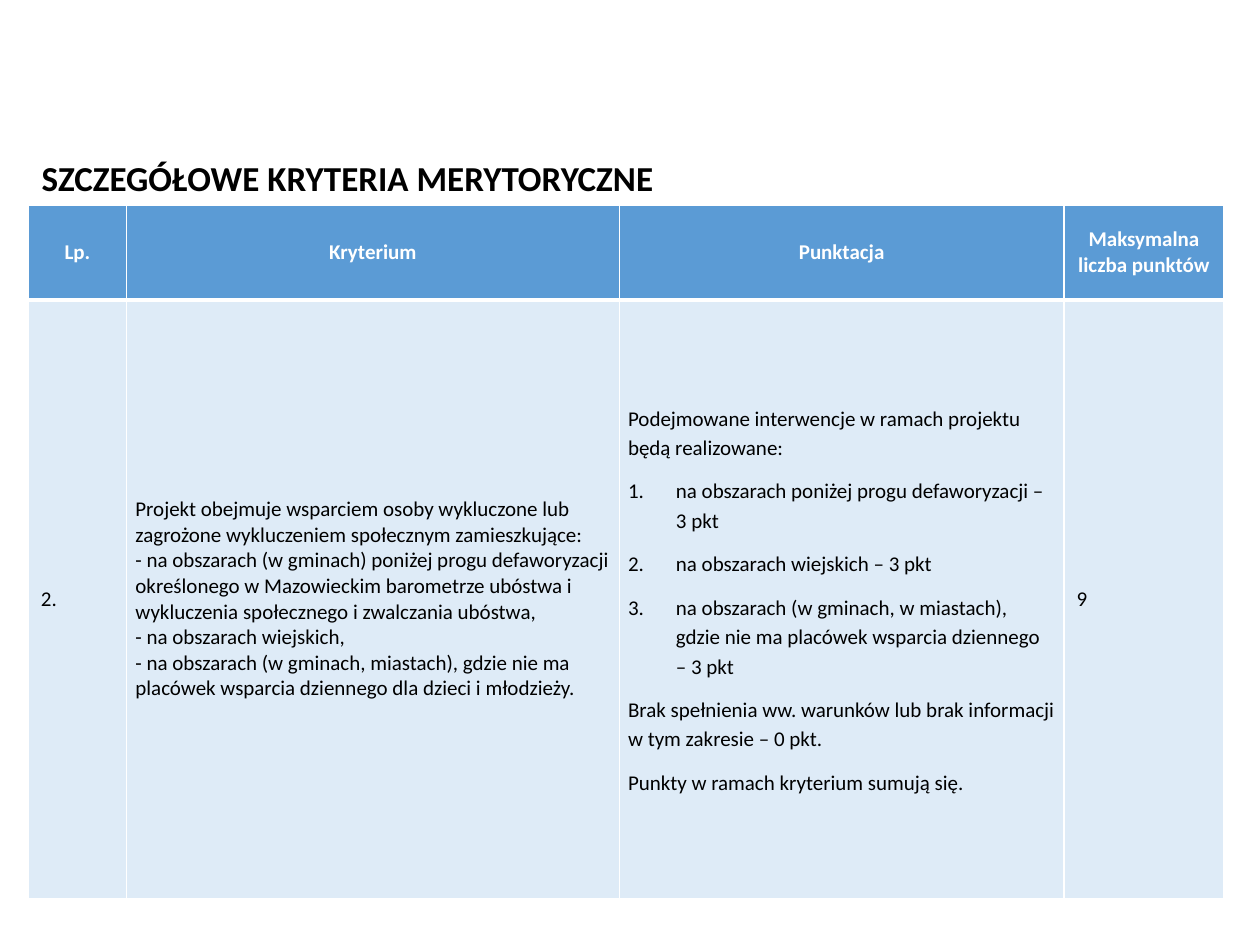
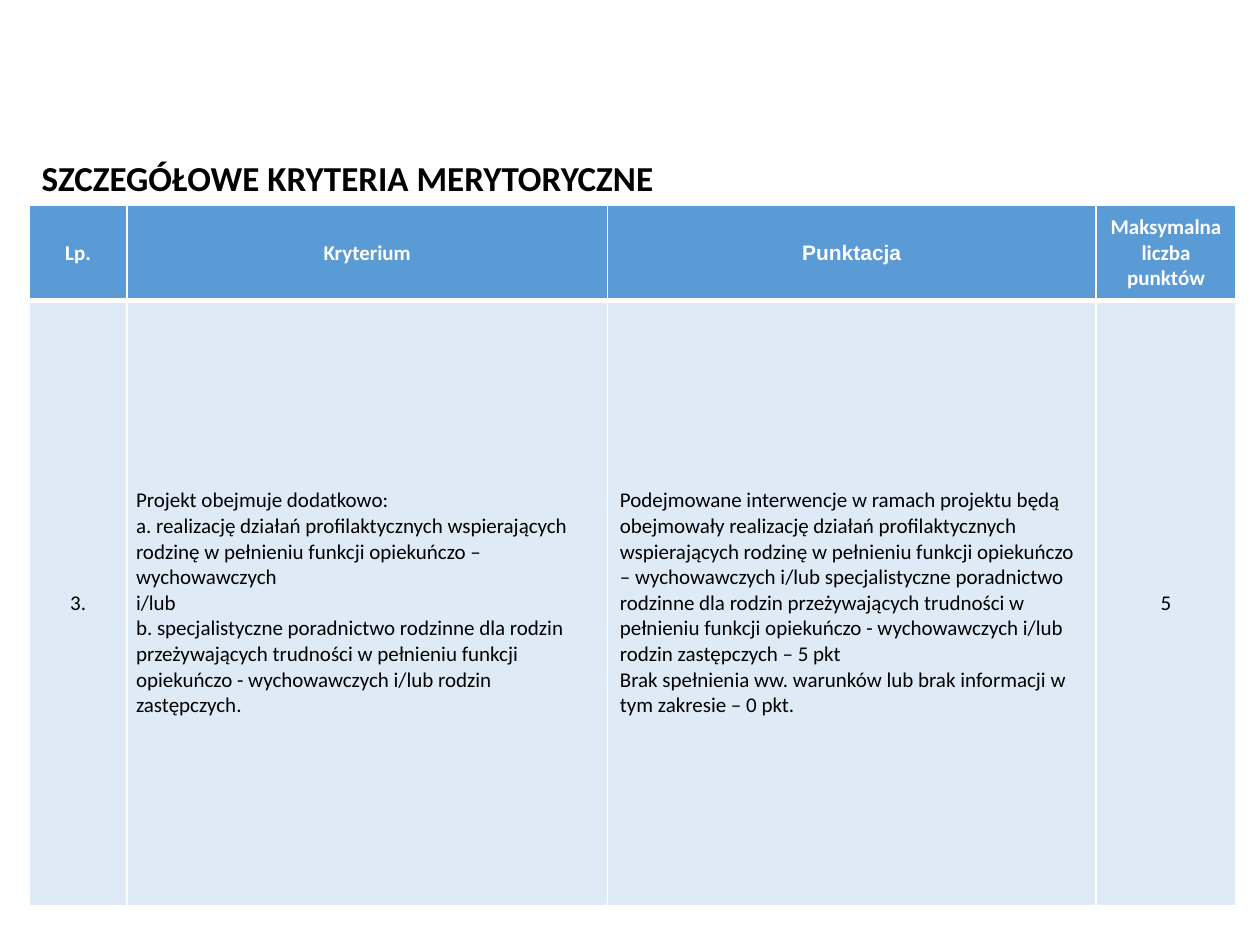
from dataclasses import dataclass, field
from typing import Optional

from lxml import etree
from pptx import Presentation
from pptx import util as u
from pptx.dml.color import RGBColor
from pptx.enum import text
from pptx.oxml.ns import qn

COLORS = {"header": "5B9BD5", "body": "DEEBF7", "white": "FFFFFF", "black": "000000"}
SLIDE_W, SLIDE_H = u.Inches(10), u.Inches(7.5)
FONT = "Calibri"
TITLE = "SZCZEGÓŁOWE KRYTERIA MERYTORYCZNE"
HEADINGS = ("Lp.", "Kryterium", "Punktacja", "Maksymalna liczba punktów")
TABLE_TOP = 21.73
NARROW = {"margin_left": u.Inches(0.07), "margin_right": u.Inches(0.07),
          "margin_top": 0, "margin_bottom": 0}
THIN, THICK = 1, 3
CENTER, LEFT = text.PP_ALIGN.CENTER, text.PP_ALIGN.LEFT


@dataclass(frozen=True)
class Line:
    text: str
    numbered: bool = False


@dataclass(frozen=True)
class Cell:
    lines: tuple[Line, ...]
    align: text.PP_ALIGN = LEFT
    margins: dict = field(default_factory=dict)
    spaced: bool = False
    font: str = FONT


@dataclass(frozen=True)
class Criterion:
    """One slide's table; left, columns and rows are percentages of the slide."""
    left: float
    columns: tuple[float, ...]
    rows: tuple[float, ...]
    cells: tuple[Cell, ...]
    heading_fonts: tuple[str, ...] = (FONT,) * 4


def lines(*texts: str, numbered: bool = False) -> tuple[Line, ...]:
    return tuple(Line(t, numbered) for t in texts)


CRITERIA = (
    Criterion(
        2.25, (7.8, 39.1, 35.3, 12.7), (10, 63.33),
        (
            Cell(lines("2.")),
            Cell(lines(
                "Projekt obejmuje wsparciem osoby wykluczone lub zagrożone wykluczeniem "
                "społecznym zamieszkujące:",
                "- na obszarach (w gminach) poniżej progu defaworyzacji określonego w "
                "Mazowieckim barometrze ubóstwa i wykluczenia społecznego i zwalczania ubóstwa,",
                "- na obszarach wiejskich,",
                "- na obszarach (w gminach, miastach), gdzie nie ma placówek wsparcia "
                "dziennego dla dzieci i młodzieży.",
            ), margins=NARROW),
            Cell(
                lines("Podejmowane interwencje w ramach projektu będą realizowane:")
                + lines(
                    "na obszarach poniżej progu defaworyzacji – 3 pkt",
                    "na obszarach wiejskich – 3 pkt",
                    "na obszarach (w gminach, w miastach), gdzie nie ma placówek wsparcia "
                    "dziennego – 3 pkt",
                    numbered=True)
                + lines(
                    "Brak spełnienia ww. warunków lub brak informacji w tym zakresie – 0 pkt.",
                    "Punkty w ramach kryterium sumują się."),
                margins=NARROW, spaced=True),
            Cell(lines("9")),
        ),
    ),
    Criterion(
        2.3, (7.8, 38.1, 38.8, 11.1), (10.1, 64),
        (
            Cell(lines("3."), CENTER),
            Cell(lines(
                "Projekt obejmuje dodatkowo:",
                "a. realizację działań profilaktycznych wspierających rodzinę w pełnieniu "
                "funkcji opiekuńczo – wychowawczych",
                "i/lub",
                "b. specjalistyczne poradnictwo rodzinne dla rodzin przeżywających trudności "
                "w pełnieniu funkcji opiekuńczo - wychowawczych i/lub rodzin zastępczych.",
            ), margins=NARROW),
            Cell(lines(
                "Podejmowane interwencje w ramach projektu będą obejmowały realizację działań "
                "profilaktycznych wspierających rodzinę w pełnieniu funkcji opiekuńczo – "
                "wychowawczych i/lub specjalistyczne poradnictwo rodzinne dla rodzin "
                "przeżywających trudności w pełnieniu funkcji opiekuńczo - wychowawczych "
                "i/lub rodzin zastępczych – 5 pkt",
                "Brak spełnienia ww. warunków lub brak informacji w tym zakresie – 0 pkt.",
            )),
            Cell(lines("5"), CENTER),
        ),
        heading_fonts=(FONT, FONT, "Arial", FONT),
    ),
)


def across(percent: float) -> int:
    return round(SLIDE_W * percent / 100)


def down(percent: float) -> int:
    return round(SLIDE_H * percent / 100)


def apply(target, formats: dict) -> None:
    for name, value in formats.items():
        setattr(target, name, value)


def style_font(font, name: str, size: float, color: str, bold: bool) -> None:
    apply(font, {"name": name, "size": u.Pt(size), "bold": bold})
    font.color.rgb = RGBColor.from_string(COLORS[color])


def number_paragraph(p) -> None:
    """Give the paragraph an automatic 1. 2. 3. with a hanging indent."""
    pPr = p._p.get_or_add_pPr()
    indent = u.Inches(0.38)
    pPr.set("marL", str(indent))
    pPr.set("indent", str(-indent))
    etree.SubElement(pPr, qn("a:buAutoNum"), type="arabicPeriod")


def set_borders(cell, top: float, bottom: float) -> None:
    tcPr = cell._tc.get_or_add_tcPr()
    for side, width in (("L", THIN), ("R", THIN), ("T", top), ("B", bottom)):
        ln = etree.SubElement(tcPr, qn(f"a:ln{side}"), w=str(u.Pt(width)))
        fill = etree.SubElement(ln, qn("a:solidFill"))
        etree.SubElement(fill, qn("a:srgbClr"), val=COLORS["white"])


def fill_cell(cell, content: Cell, header: bool) -> None:
    set_borders(cell, *((THIN, THICK) if header else (THICK, THIN)))
    cell.fill.solid()
    cell.fill.fore_color.rgb = RGBColor.from_string(COLORS["header" if header else "body"])
    apply(cell, {"vertical_anchor": text.MSO_ANCHOR.MIDDLE, **content.margins})
    tf = cell.text_frame
    for i, line in enumerate(content.lines):
        p = tf.add_paragraph() if i else tf.paragraphs[0]
        p.alignment = content.align
        if content.spaced:
            apply(p, {"line_spacing": 1.15, "space_before": u.Pt(4 if i else 0),
                      "space_after": u.Pt(4)})
        if line.numbered:
            number_paragraph(p)
        r = p.add_run()
        r.text = line.text
        style_font(r.font, content.font, 12, "white" if header else "black", header)


def add_title(s) -> None:
    sp = s.shapes.title
    apply(sp, {"left": across(2.3), "top": down(15.87),
               "width": across(93.5), "height": down(5.87)})
    tf = sp.text_frame
    tf.text = TITLE
    apply(tf, {"word_wrap": True, "vertical_anchor": text.MSO_ANCHOR.MIDDLE,
               "auto_size": text.MSO_AUTO_SIZE.SHAPE_TO_FIT_TEXT})
    p = tf.paragraphs[0]
    p.alignment = LEFT
    style_font(p.runs[0].font, FONT, 20, "black", True)


def add_criterion_table(s, criterion: Criterion) -> None:
    table = s.shapes.add_table(
        2, len(HEADINGS), across(criterion.left), down(TABLE_TOP),
        across(sum(criterion.columns)), down(sum(criterion.rows))).table
    for column, share in zip(table.columns, criterion.columns):
        column.width = across(share)
    for row, share in zip(table.rows, criterion.rows):
        row.height = down(share)
    headings = [Cell(lines(h), CENTER, font=f)
                for h, f in zip(HEADINGS, criterion.heading_fonts)]
    for r, contents in enumerate((headings, criterion.cells)):
        for c, content in enumerate(contents):
            fill_cell(table.cell(r, c), content, header=r == 0)


def main() -> None:
    prs = Presentation()
    apply(prs, {"slide_width": SLIDE_W, "slide_height": SLIDE_H})
    title_only = prs.slide_layouts.get_by_name("Title Only")
    for criterion in CRITERIA:
        s = prs.slides.add_slide(title_only)
        add_criterion_table(s, criterion)
        add_title(s)
    prs.save("out.pptx")


if __name__ == "__main__":
    main()
